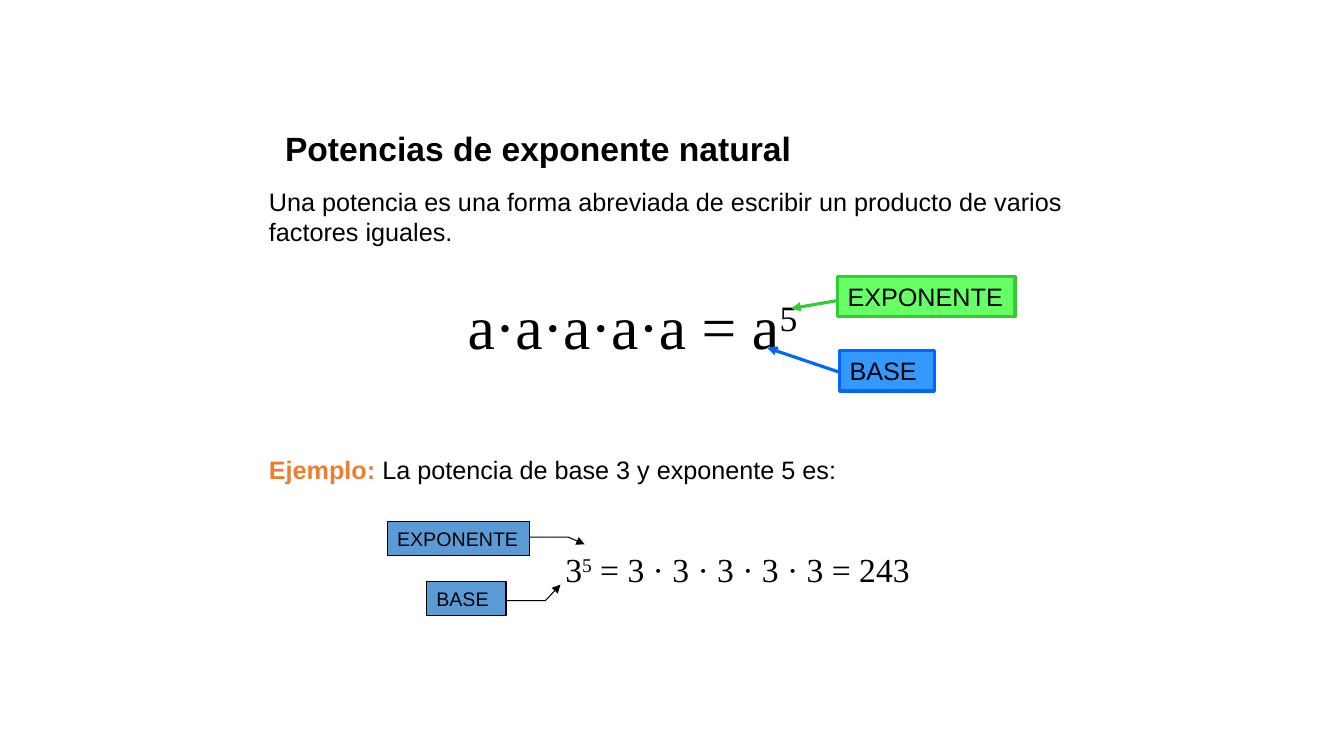
from lxml import etree
from pptx import Presentation
from pptx import util as u
from pptx.dml.color import RGBColor
from pptx.enum import shapes, text
from pptx.oxml.ns import qn

BLACK = RGBColor(0x00, 0x00, 0x00)
ORANGE = RGBColor(0xED, 0x7D, 0x31)
BLUE = RGBColor(0x33, 0x99, 0xFF)
BLUE_EDGE = RGBColor(0x00, 0x66, 0xFF)
GREEN = RGBColor(0x66, 0xFF, 0x66)
GREEN_EDGE = RGBColor(0x33, 0xCC, 0x33)
STEEL = RGBColor(0x5B, 0x9B, 0xD5)

# Grid of square cells, ten to the inch
CELL = u.Inches(0.1)
COLUMNS, ROWS = 133.33, 75
SANS, SERIF = "Arial", "Times New Roman"

# Texts: (left, top, width, height), wrap, font, size, spans of (text, style)
TEXTS = [
    ((25.7, 18, 84.5, 7), True, SANS, 18,
     [("Una potencia es una forma abreviada de escribir un producto de varios "
       "factores iguales.", "plain")]),
    ((45.4, 28.1, 36.8, 8.4), False, SERIF, 44,
     [("a·a·a·a·a = a", "plain"), ("5", "raised")]),
    ((25.7, 44.6, 58.3, 4), False, SANS, 18,
     [("Ejemplo:", "accent"),
      (" La potencia de base 3 y exponente 5 es:", "plain")]),
    ((55.1, 54, 36.7, 5), False, SERIF, 24,
     [("3", "plain"), ("5", "raised"),
      (" = 3 · 3 · 3 · 3 · 3 = 243", "plain")]),
    ((27.3, 12.2, 52.2, 5), False, SANS, 24,
     [("Potencias de exponente natural", "bold")]),
]

# Labels: text, place, size, fill, edge, edge width, points of the arrow
LABELS = [
    ("BASE", (83.3, 34.8, 9.4, 4), 18, BLUE, BLUE_EDGE, 2.25,
     [(83.2, 36.9), (76.1, 34.5)]),
    ("EXPONENTE", (83.1, 27.4, 17.6, 4), 18, GREEN, GREEN_EDGE, 2.25,
     [(83.2, 29.8), (78.5, 30.6)]),
    ("EXPONENTE", (38.4, 51.7, 14.1, 3.4), 14, STEEL, BLACK, 0.75,
     [(52.5, 53.3), (56.4, 53.3), (58, 54)]),
    ("BASE", (42.3, 57.7, 7.9, 3.4), 14, STEEL, BLACK, 0.75,
     [(50.1, 59.6), (54.1, 59.6), (55.6, 58)]),
]


def cells(*counts):
    return [round(count * CELL) for count in counts]


def write(box, spans, font, size, wrap=False):
    frame = box.text_frame
    frame.word_wrap = wrap
    frame.auto_size = text.MSO_AUTO_SIZE.SHAPE_TO_FIT_TEXT
    para = frame.paragraphs[0]
    para.alignment = text.PP_ALIGN.LEFT
    for words, style in spans:
        span = para.add_run()
        span.text = words
        span.font.name = font
        span.font.size = u.Pt(size)
        span.font.bold = style in ("bold", "accent")
        span.font.color.rgb = ORANGE if style == "accent" else BLACK
        if style == "raised":
            span._r.get_or_add_rPr().set("baseline", "30000")


def draw_arrow(group, points, color, width):
    start, *others = [cells(*point) for point in points]
    if len(others) == 1:
        arrow = group.shapes.add_connector(
            shapes.MSO_CONNECTOR.STRAIGHT, *start, *others[0])
        etree.SubElement(arrow._element.spPr, qn("a:effectLst"))
    else:
        outline = group.shapes.build_freeform(*start)
        outline.add_line_segments(others, close=False)
        arrow = outline.convert_to_shape()
        arrow.fill.background()
        arrow.shadow.inherit = False
    arrow.line.color.rgb = color
    arrow.line.width = u.Pt(width)
    etree.SubElement(arrow.line._get_or_add_ln(), qn("a:tailEnd"), type="triangle")


def add_label(page, words, place, size, fill, edge, width, points):
    group = page.shapes.add_group_shape()
    box = group.shapes.add_shape(shapes.MSO_SHAPE.RECTANGLE, *cells(*place))
    box.shadow.inherit = False
    box.fill.solid()
    box.fill.fore_color.rgb = fill
    box.line.color.rgb = edge
    box.line.width = u.Pt(width)
    write(box, [(words, "plain")], SANS, size)
    draw_arrow(group, points, edge, width)


def main():
    deck = Presentation()
    deck.slide_width, deck.slide_height = cells(COLUMNS, ROWS)
    page = deck.slides.add_slide(deck.slide_layouts[6])

    # Title, definition, formula and example
    for place, wrap, font, size, spans in TEXTS:
        write(page.shapes.add_textbox(*cells(*place)), spans, font, size, wrap)

    # Labels pointing at base and exponent
    for label in LABELS:
        add_label(page, *label)

    deck.save("out.pptx")


if __name__ == "__main__":
    main()
